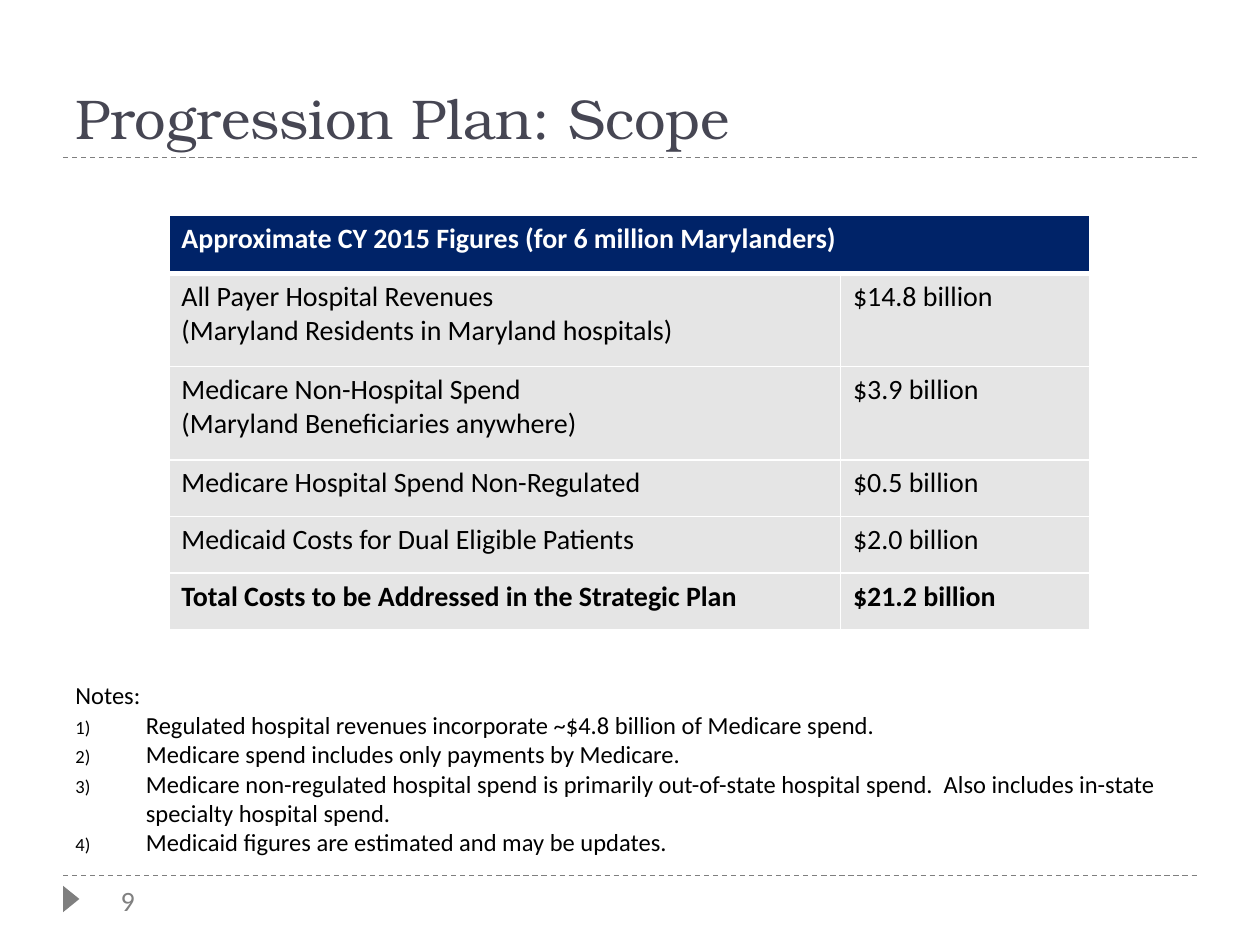
from lxml import etree
from pptx import Presentation, util as u
from pptx.dml import color
from pptx.enum import dml, shapes, text
from pptx.oxml import ns

BODY_FONT = "Calibri"
GREY, WHITE, BLACK = "7F7F7F", "FFFFFF", "000000"
HEADING = "Approximate CY 2015 Figures (for 6 million Marylanders)"
FIGURES = [
    ("All Payer Hospital Revenues\n(Maryland Residents in Maryland hospitals)", "$14.8 billion"),
    ("Medicare Non-Hospital Spend\n(Maryland Beneficiaries anywhere)", "$3.9 billion"),
    ("Medicare Hospital Spend Non-Regulated", "$0.5 billion"),
    ("Medicaid Costs for Dual Eligible Patients", "$2.0 billion"),
    ("Total Costs to be Addressed in the Strategic Plan", "$21.2 billion"),
]
NOTES = [
    "Regulated hospital revenues incorporate ~$4.8 billion of Medicare spend.",
    "Medicare spend includes only payments by Medicare.",
    "Medicare non-regulated hospital spend is primarily out-of-state hospital spend.  "
    "Also includes in-state specialty hospital spend.",
    "Medicaid figures are estimated and may be updates.",
]


def paint(target, hex_color):
    """Give a fill, or the fill of a line, one solid colour."""
    target.solid()
    target.fore_color.rgb = color.RGBColor.from_string(hex_color)


def apply(target, **values):
    """Set each named attribute on the target."""
    for name, value in values.items():
        setattr(target, name, value)


def write(frame, content, size, hex_color, font=BODY_FONT, bold=False):
    """Fill a text frame and format every paragraph alike."""
    frame.text = content
    for paragraph in frame.paragraphs:
        paragraph.alignment = text.PP_ALIGN.LEFT
        for run in paragraph.runs:
            apply(run.font, name=font, size=u.Pt(size), bold=bold)
            paint(run.font.fill, hex_color)


def add_element(parent, tag, **attributes):
    """Append a DrawingML element with the given attributes."""
    element = etree.SubElement(parent, ns.qn(tag))
    for name, value in attributes.items():
        element.set(name, str(value))
    return element


def add_rule(slide, left, top, width):
    """Draw a dashed horizontal rule."""
    rule = slide.shapes.add_connector(
        shapes.MSO_CONNECTOR.STRAIGHT, u.Inches(left), u.Inches(top),
        u.Inches(left + width), u.Inches(top))
    paint(rule.line.fill, GREY)
    apply(rule.line, width=u.Pt(0.75), dash_style=dml.MSO_LINE.DASH)
    add_element(rule._element.spPr, "a:effectLst")


def add_title(slide, left, top, width, height):
    """Place the title with the rule along its lower edge."""
    add_rule(slide, left, top + height, width)
    title = slide.shapes.title
    apply(title, left=u.Inches(left), top=u.Inches(top),
          width=u.Inches(width), height=u.Inches(height))
    apply(title.text_frame, vertical_anchor=text.MSO_ANCHOR.BOTTOM, word_wrap=True,
          auto_size=text.MSO_AUTO_SIZE.NONE)
    write(title.text_frame, "Progression Plan: Scope", 32, "464653", "TeX Gyre Bonum")


def add_footer(slide, left, top, width):
    """Place the rule, the marker and the page number."""
    add_rule(slide, left, top, width)
    marker = slide.shapes.add_shape(
        shapes.MSO_SHAPE.ISOSCELES_TRIANGLE, u.Inches(left - 0.04), u.Inches(top + 0.12),
        u.Inches(0.21), u.Inches(0.13))
    marker.rotation = 90
    marker.shadow.inherit = False
    paint(marker.fill, GREY)
    marker.line.fill.background()
    number = slide.shapes.add_textbox(
        u.Inches(left + 0.36), u.Inches(top + 0.01), u.Inches(0.47), u.Inches(0.37))
    number.text_frame.word_wrap = False
    write(number.text_frame, "9", 16, "808080")


def style_cell(cell, content, fill, ink, bold, top_border=1, bottom_border=1):
    """Write a table cell and give it white borders and a fill."""
    write(cell.text_frame, content, 16, ink, bold=bold)
    properties = cell._tc.get_or_add_tcPr()
    borders = {"a:lnL": 1, "a:lnR": 1, "a:lnT": top_border, "a:lnB": bottom_border}
    for tag, width in borders.items():
        border = add_element(properties, tag, w=u.Pt(width))
        add_element(add_element(border, "a:solidFill"), "a:srgbClr", val=WHITE)
    paint(cell.fill, fill)


def add_figures(slide, left, top, width, height):
    """Build the cost table under its merged heading."""
    table = slide.shapes.add_table(
        len(FIGURES) + 1, 2, u.Inches(left), u.Inches(top),
        u.Inches(width), u.Inches(height)).table
    amount_width = 1.98
    for column, size in zip(table.columns, (width - amount_width, amount_width)):
        column.width = u.Inches(size)
    for row, size in zip(table.rows, (0.46, 0.74, 0.74, 0.45, 0.45, 0.45)):
        row.height = u.Inches(size)
    table.cell(0, 0).merge(table.cell(0, 1))
    style_cell(table.cell(0, 0), HEADING, "002368", WHITE, True, bottom_border=3)
    for row, figures in enumerate(FIGURES, 1):
        for column, content in enumerate(figures):
            style_cell(table.cell(row, column), content, "E5E5E5", BLACK,
                       row == len(FIGURES), top_border=3 if row == 1 else 1)


def add_notes(slide, left, top, width, height):
    """Place the numbered notes below their heading."""
    notes = slide.shapes.add_textbox(
        u.Inches(left), u.Inches(top), u.Inches(width), u.Inches(height)).text_frame
    notes.word_wrap = True
    write(notes, "\n".join(["Notes:", *NOTES]), 14, BLACK)
    indent = u.Inches(0.56)
    for paragraph in notes.paragraphs[1:]:
        properties = paragraph._p.get_or_add_pPr()
        properties.set("marL", str(indent))
        properties.set("indent", str(-indent))
        add_element(properties, "a:buSzPct", val=76000)
        add_element(properties, "a:buFont", typeface=BODY_FONT)
        add_element(properties, "a:buAutoNum", type="arabicParenR")


def main():
    """Build and save the scope slide."""
    deck = Presentation()
    apply(deck, slide_width=u.Inches(10), slide_height=u.Inches(7.5))
    slide = deck.slides.add_slide(deck.slide_layouts[5])
    add_footer(slide, 0.5, 6.95, 9)
    add_title(slide, 0.5, 0.17, 9, 1.08)
    add_notes(slide, 0.5, 5.35, 9, 1.53)
    add_figures(slide, 1.34, 1.71, 7.31, 3.29)
    deck.save("out.pptx")


if __name__ == "__main__":
    main()
